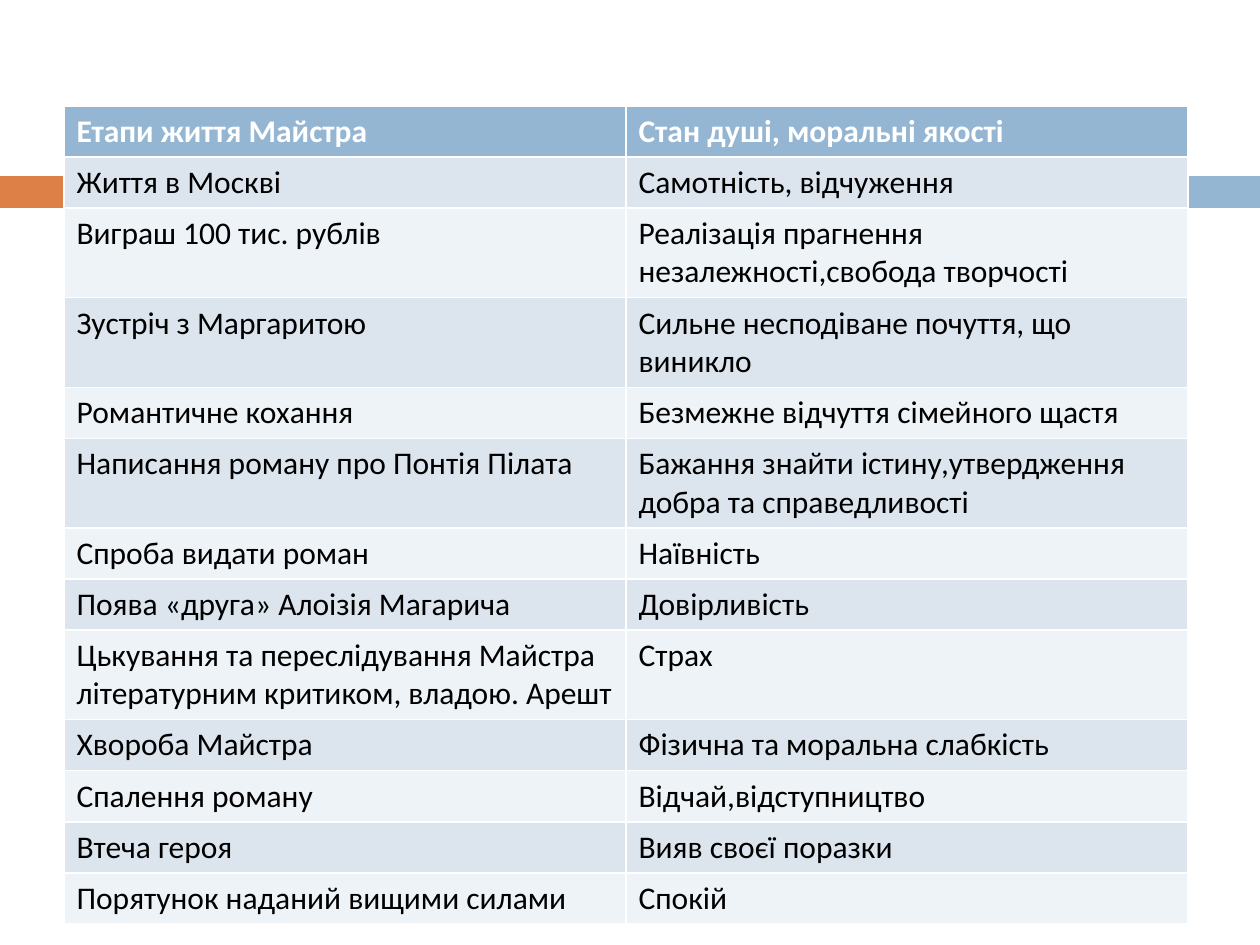
"""Build a slide with a table of the Master's life stages and states of soul."""
from pptx import Presentation
from pptx.dml.color import RGBColor
from pptx.enum.shapes import MSO_SHAPE
from pptx.util import Emu, Pt

RECTANGLE = MSO_SHAPE.RECTANGLE
FONT = "Calibri"
FONT_SIZE = 18
COLORS = {
    "orange": "DD8047",
    "blue": "94B6D2",
    "odd": "DCE5EE",
    "even": "EEF3F7",
    "header_text": "FFFFFF",
    "body_text": "000000",
}
STAGES = [
    ("Етапи життя Майстра", "Стан душі, моральні якості"),
    ("Життя в Москві", "Самотність, відчуження"),
    ("Виграш 100 тис. рублів", "Реалізація прагнення незалежності,свобода творчості"),
    ("Зустріч з Маргаритою", "Сильне несподіване почуття, що виникло"),
    ("Романтичне кохання", "Безмежне відчуття сімейного щастя"),
    ("Написання роману про Понтія Пілата", "Бажання знайти істину,утвердження добра та справедливості"),
    ("Спроба видати роман", "Наївність"),
    ("Поява «друга» Алоізія Магарича", "Довірливість"),
    ("Цькування та переслідування Майстра літературним критиком, владою. Арешт", "Страх"),
    ("Хвороба Майстра", "Фізична та моральна слабкість"),
    ("Спалення роману", "Відчай,відступництво"),
    ("Втеча героя", "Вияв своєї поразки"),
    ("Порятунок наданий вищими силами", "Спокій"),
]
SLIDE_WIDTH, SLIDE_HEIGHT = 1260, 945
BAND_TOP, BAND_HEIGHT = 176, 32
BANDS = [("orange", 0, 73), ("blue", 82, SLIDE_WIDTH - 82)]
TABLE_LEFT, TABLE_TOP = 64, 106
COLUMN_WIDTH, ROW_HEIGHT = 562, 51


def px(length):
    return Emu(round(length * 914400 / 126))


def color(name):
    return RGBColor.from_string(COLORS[name])


def add_band(slide, fill, left, width):
    band = slide.shapes.add_shape(RECTANGLE, px(left), px(BAND_TOP), px(width), px(BAND_HEIGHT))
    band.shadow.inherit = False
    band.fill.solid()
    band.fill.fore_color.rgb = color(fill)
    band.line.fill.background()


def fill_cell(cell, text, row):
    is_header = row == 0
    cell.fill.solid()
    cell.fill.fore_color.rgb = color("blue" if is_header else "odd" if row % 2 else "even")
    cell.text = text
    font = cell.text_frame.paragraphs[0].font
    font.name = FONT
    font.size = Pt(FONT_SIZE)
    font.bold = is_header
    font.color.rgb = color("header_text" if is_header else "body_text")


def add_stages(slide):
    columns = len(STAGES[0])
    table = slide.shapes.add_table(
        len(STAGES), columns, px(TABLE_LEFT), px(TABLE_TOP),
        px(columns * COLUMN_WIDTH), px(len(STAGES) * ROW_HEIGHT),
    ).table
    for column in table.columns:
        column.width = px(COLUMN_WIDTH)
    for row, stage in enumerate(STAGES):
        table.rows[row].height = px(ROW_HEIGHT)
        for column, text in enumerate(stage):
            fill_cell(table.cell(row, column), text, row)


def main():
    presentation = Presentation()
    presentation.slide_width = px(SLIDE_WIDTH)
    presentation.slide_height = px(SLIDE_HEIGHT)
    slide = presentation.slides.add_slide(presentation.slide_layouts[6])
    for band in BANDS:
        add_band(slide, *band)
    add_stages(slide)
    presentation.save("out.pptx")


if __name__ == "__main__":
    main()
